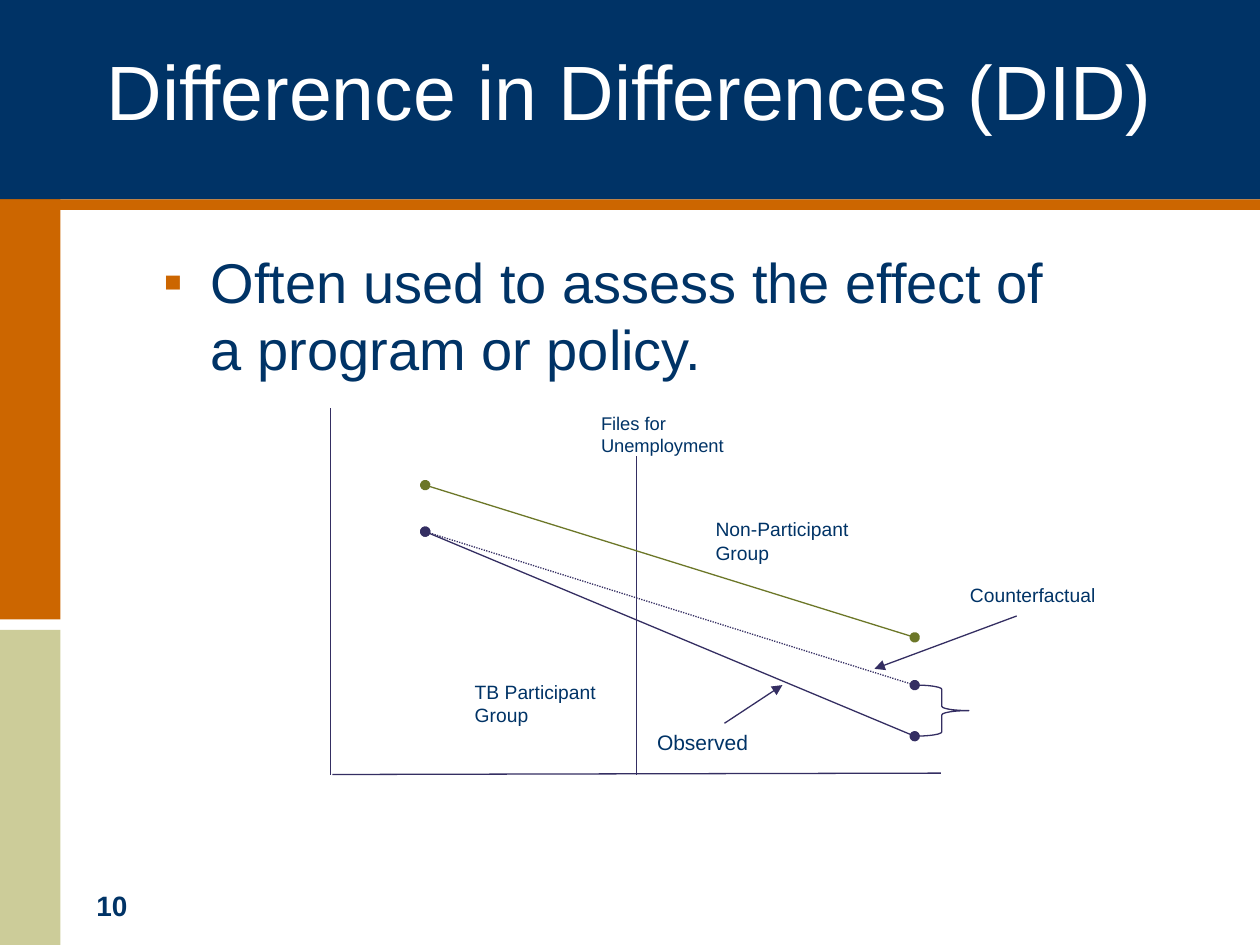
from dataclasses import dataclass

from lxml import etree
from pptx import Presentation
from pptx.dml.color import RGBColor
from pptx.enum.dml import MSO_LINE
from pptx.enum.shapes import MSO_CONNECTOR, MSO_SHAPE
from pptx.enum.text import PP_ALIGN
from pptx.oxml.ns import qn
from pptx.util import Pt

RECT = MSO_SHAPE.RECTANGLE
BRACE = MSO_SHAPE.RIGHT_BRACE
LINE = MSO_CONNECTOR.STRAIGHT
DOTS = MSO_LINE.ROUND_DOT
LEFT, CENTER = PP_ALIGN.LEFT, PP_ALIGN.CENTER


@dataclass(frozen=True)
class Theme:
    navy: str = "003366"
    rust: str = "CC6600"
    sand: str = "CCCC99"
    white: str = "FFFFFF"
    ink: str = "342E62"
    olive: str = "6C7728"
    font: str = "Arial"
    title: float = 44
    body: float = 32
    page: float = 16
    large: float = 12
    label: float = 11
    small: float = 10.5
    stroke: float = 0.75
    indent: float = 27


class Deck:
    """Draws styled elements on the current slide."""

    def __init__(self, theme):
        self.theme = theme
        self.file = Presentation()
        self.file.slide_width, self.file.slide_height = Pt(720), Pt(540)
        self.slide = self.file.slides.add_slide(self.file.slide_layouts[6])

    def band(self, left, top, width, height, color):
        shape = self.slide.shapes.add_shape(RECT, Pt(left), Pt(top), Pt(width), Pt(height))
        shape.shadow.inherit = False
        shape.fill.solid()
        shape.fill.fore_color.rgb = RGBColor.from_string(color)
        shape.line.fill.background()

    def brace(self, left, top, width, height):
        shape = self.slide.shapes.add_shape(BRACE, Pt(left), Pt(top), Pt(width), Pt(height))
        shape.shadow.inherit = False
        shape.fill.background()
        shape.line.color.rgb = RGBColor.from_string(self.theme.ink)
        shape.line.width = Pt(self.theme.stroke)

    def text(self, left, top, width, height, words, size, color=None,
             bold=False, align=LEFT, bullet=None):
        box = self.slide.shapes.add_textbox(Pt(left), Pt(top), Pt(width), Pt(height))
        box.text_frame.word_wrap = True
        para = box.text_frame.paragraphs[0]
        para.alignment = align
        if bullet:
            self.bullet(para, bullet)
        run = para.add_run()
        run.text = words
        font = run.font
        font.name, font.size, font.bold = self.theme.font, Pt(size), bold
        font.color.rgb = RGBColor.from_string(color or self.theme.navy)

    def bullet(self, para, mark):
        props = para._p.get_or_add_pPr()
        props.set("marL", str(Pt(self.theme.indent)))
        props.set("indent", str(-Pt(self.theme.indent)))
        tint = etree.SubElement(props, qn("a:buClr"))
        etree.SubElement(tint, qn("a:srgbClr"), val=self.theme.rust)
        etree.SubElement(props, qn("a:buFont"), typeface=self.theme.font)
        etree.SubElement(props, qn("a:buChar"), char=mark)

    def line(self, start, end, color=None, head=None, tail=None, dash=None):
        link = self.slide.shapes.add_connector(LINE, *map(Pt, start + end))
        link.line.color.rgb = RGBColor.from_string(color or self.theme.ink)
        link.line.width = Pt(self.theme.stroke)
        if dash:
            link.line.dash_style = dash
        props = link.element.spPr
        stroke = props.find(qn("a:ln"))
        for tag, kind in (("a:headEnd", head), ("a:tailEnd", tail)):
            if kind:
                etree.SubElement(stroke, qn(tag), type=kind)
        etree.SubElement(props, qn("a:effectLst"))

    def trend(self, start, end, color=None, dash=None):
        self.line(start, end, color, "oval", "oval", dash)

    def arrow(self, start, end):
        self.line(start, end, tail="triangle")

    def save(self):
        self.file.save("out.pptx")


def main():
    theme = Theme()
    deck = Deck(theme)

    deck.band(0, 36, 34.5, 318, theme.rust)
    deck.band(0, 0, 720, 114, theme.navy)
    deck.band(0, 360, 34.5, 180, theme.sand)
    deck.band(0, 114, 720, 6, theme.rust)
    deck.text(48, 504, 48, 26.5, "10", theme.page, bold=True)
    deck.text(36, 21.6, 648, 90, "Difference in Differences (DID)",
              theme.title, theme.white, align=CENTER)
    deck.text(86.4, 138, 543.6, 342,
              "Often used to assess the effect of a program or policy.",
              theme.body, bullet="▪")

    base, event = 442.6, 363.6
    deck.line((188.8, 233.2), (188.8, base))
    deck.line((190, base), (537.6, 441.8))
    deck.line((event, base), (event, 260.8))

    first, last = 243, 522.7
    shared, above, below = (first, 303.8), (last, 391.5), (last, 420.7)
    deck.trend((first, 277.2), (last, 364.2), theme.olive)
    deck.trend(shared, below)
    deck.trend(shared, above, dash=DOTS)
    deck.brace(*above, 31, below[1] - above[1])
    deck.arrow((581, 352), (499.7, 382.2))
    deck.arrow((414, 413.3), (447.1, 391.5))

    for left, top, height, words, size in (
        (264.2, 385.2, 33.8, "TB Participant Group", theme.label),
        (401.8, 292.3, 33.8, "Non-Participant Group", theme.label),
        (547.2, 329.8, 20.9, "Counterfactual", theme.label),
        (368.4, 413.3, 21.6, "Observed", theme.large),
        (336.4, 231.8, 32.4, "Files for Unemployment", theme.small),
    ):
        deck.text(left, top, 90.7, height, words, size)

    deck.save()


if __name__ == "__main__":
    main()
